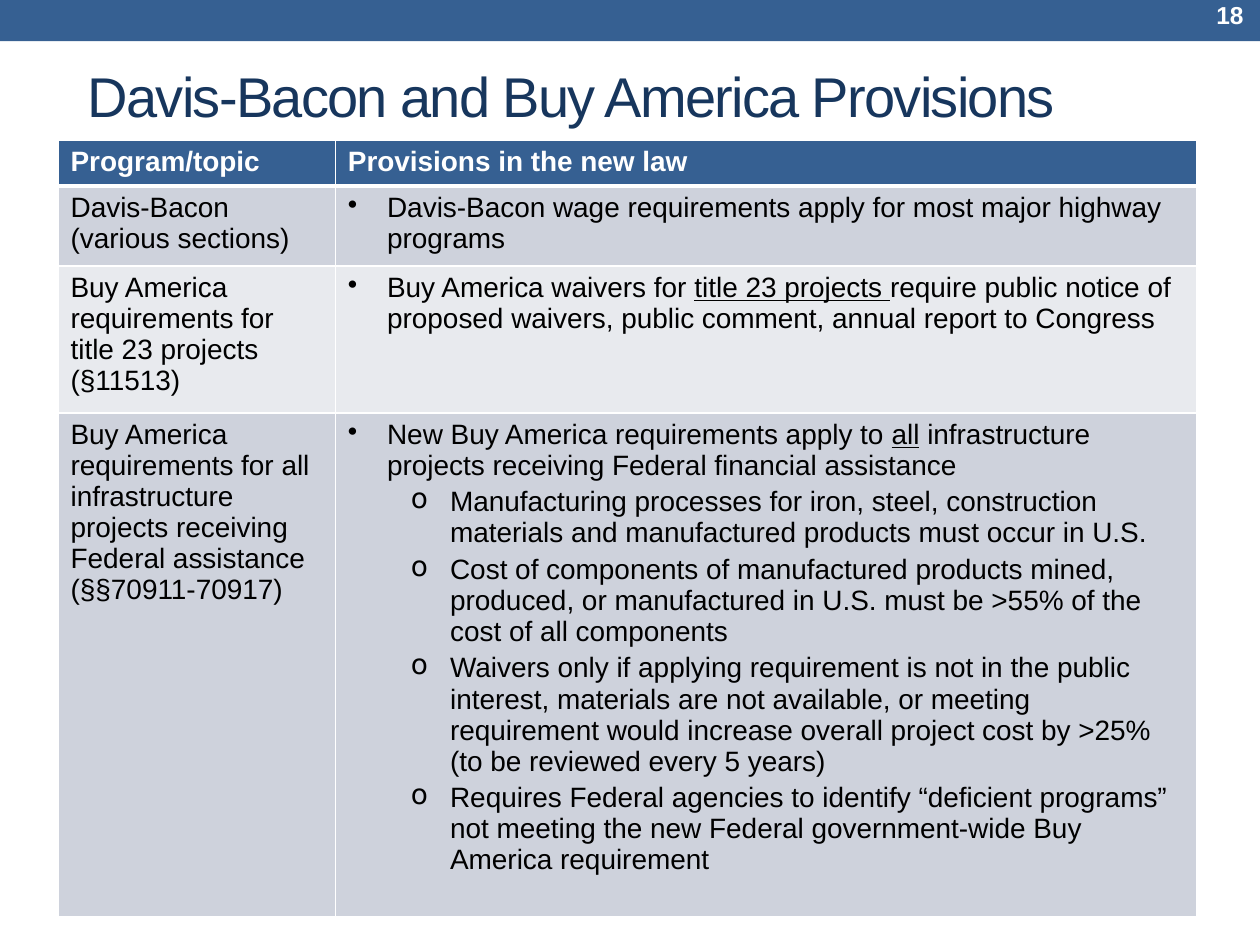
import dataclasses

import pptx
import pptx.dml.color
import pptx.enum.shapes
import pptx.enum.text
import pptx.oxml
import pptx.oxml.ns
import pptx.util
from pptx.util import Cm

PP_ALIGN = pptx.enum.text.PP_ALIGN


@dataclasses.dataclass(frozen=True)
class Theme:
    font: str = "Arial"
    band: str = "366092"
    title: str = "17365D"
    white: str = "FFFFFF"
    body: str = "000000"
    stripes: tuple = ("CED2DC", "E8EAEE")
    title_size: int = 32
    table_size: int = 16
    number_size: int = 14


@dataclasses.dataclass(frozen=True)
class Bullet:
    """A bulleted paragraph; text between underscores is underlined."""
    text: str
    level: int = 0


HEADER = ("Program/topic", "Provisions in the new law")
PROVISIONS = [
    (["Davis-Bacon", "(various sections)"],
     [Bullet("Davis-Bacon wage requirements apply for most major highway programs")]),
    (["Buy America requirements for title 23 projects", "(§11513)"],
     [Bullet("Buy America waivers for _title 23 projects _require public notice of "
             "proposed waivers, public comment, annual report to Congress")]),
    (["Buy America requirements for all infrastructure projects receiving "
      "Federal assistance", "(§§70911-70917)"],
     [Bullet("New Buy America requirements apply to _all_ infrastructure projects "
             "receiving Federal financial assistance"),
      Bullet("Manufacturing processes for iron, steel, construction materials and "
             "manufactured products must occur in U.S.", 1),
      Bullet("Cost of components of manufactured products mined, produced, or "
             "manufactured in U.S. must be >55% of the cost of all components", 1),
      Bullet("Waivers only if applying requirement is not in the public interest, "
             "materials are not available, or meeting requirement would increase "
             "overall project cost by >25% (to be reviewed every 5 years)", 1),
      Bullet("Requires Federal agencies to identify “deficient programs” not meeting "
             "the new Federal government-wide Buy America requirement", 1)]),
]
COLUMN_WIDTHS = (5.59, 17.37)
ROW_HEIGHTS = (0.85, 1.5, 2.76, 9.42)


class SlideBuilder:
    def __init__(self, slide, theme):
        self.slide = slide
        self.theme = theme

    def color(self, value):
        return pptx.dml.color.RGBColor.from_string(value)

    def style(self, paragraph, size, color, bold=False):
        font = paragraph.font
        font.name = self.theme.font
        font.size = pptx.util.Pt(size)
        font.color.rgb = self.color(color)
        font.bold = bold

    def bar(self, left, top, width, height):
        bar = self.slide.shapes.add_shape(
            pptx.enum.shapes.MSO_SHAPE.RECTANGLE, Cm(left), Cm(top), Cm(width), Cm(height))
        bar.shadow.inherit = False
        bar.fill.solid()
        bar.fill.fore_color.rgb = self.color(self.theme.band)
        bar.line.fill.background()

    def text(self, text, box, size, color, bold=False, align=PP_ALIGN.LEFT, spacing=0):
        """Add one line of text; spacing is between letters, in points."""
        frame = self.slide.shapes.add_textbox(*map(Cm, box)).text_frame
        frame.word_wrap = True
        frame.vertical_anchor = pptx.enum.text.MSO_ANCHOR.MIDDLE
        paragraph = frame.paragraphs[0]
        paragraph.alignment = align
        run = paragraph.add_run()
        run.text = text
        self.style(paragraph, size, color, bold)
        if spacing:
            run.font._element.set("spc", str(spacing * 100))

    def bullet(self, paragraph, item):
        for index, part in enumerate(item.text.split("_")):
            run = paragraph.add_run()
            run.text = part
            if index % 2:
                run.font.underline = True
        paragraph.level = item.level
        paragraph.space_after = pptx.util.Pt(3)
        properties = paragraph._p.get_or_add_pPr()
        properties.set("marL", str(Cm(0.79 + 1.27 * item.level)))
        properties.set("indent", str(Cm(-0.79)))
        mark = pptx.oxml.parse_xml(
            f'<a:buChar {pptx.oxml.ns.nsdecls("a")} char="{"•o"[item.level]}"/>')
        properties.insert_element_before(mark, "a:tabLst", "a:defRPr", "a:extLst")

    def borders(self, cell, row):
        """Draw white cell borders, heavier below the header row."""
        properties = cell._tc.get_or_add_tcPr()
        widths = {"L": 1, "R": 1, "T": 3 if row == 1 else 1, "B": 3 if row == 0 else 1}
        for position, (side, width) in enumerate(widths.items()):
            properties.insert(position, pptx.oxml.parse_xml(
                f'<a:ln{side} {pptx.oxml.ns.nsdecls("a")} w="{pptx.util.Pt(width)}">'
                f'<a:solidFill><a:srgbClr val="{self.theme.white}"/></a:solidFill>'
                f'</a:ln{side}>'))

    def cell(self, cell, row, items):
        theme = self.theme
        header = row == 0
        cell.fill.solid()
        cell.fill.fore_color.rgb = self.color(
            theme.band if header else theme.stripes[(row - 1) % 2])
        self.borders(cell, row)
        frame = cell.text_frame
        for index, item in enumerate(items):
            paragraph = frame.add_paragraph() if index else frame.paragraphs[0]
            if isinstance(item, Bullet):
                self.bullet(paragraph, item)
            else:
                paragraph.add_run().text = item
            self.style(paragraph, theme.table_size,
                       theme.white if header else theme.body, header)

    def table(self, left, top, rows):
        table = self.slide.shapes.add_table(
            len(rows), len(COLUMN_WIDTHS), Cm(left), Cm(top),
            Cm(sum(COLUMN_WIDTHS)), Cm(sum(ROW_HEIGHTS))).table
        for column, width in zip(table.columns, COLUMN_WIDTHS):
            column.width = Cm(width)
        for row, (height, contents) in enumerate(zip(ROW_HEIGHTS, rows)):
            table.rows[row].height = Cm(height)
            for column, items in enumerate(contents):
                self.cell(table.cell(row, column), row, items)


def main():
    presentation = pptx.Presentation()
    presentation.slide_width = Cm(25.4)
    presentation.slide_height = Cm(19.05)
    theme = Theme()
    builder = SlideBuilder(
        presentation.slides.add_slide(presentation.slide_layouts[6]), theme)
    builder.bar(0, -0.18, 25.4, 1.01)
    builder.text("Davis-Bacon and Buy America Provisions", (1.52, 0.69, 23.57, 2.46),
                 theme.title_size, theme.title, spacing=-1)
    builder.table(1.17, 2.82, [[[heading] for heading in HEADER], *PROVISIONS])
    builder.text("18", (22.35, -0.15, 2.97, 0.91), theme.number_size, theme.white,
                 bold=True, align=PP_ALIGN.RIGHT)
    presentation.save("out.pptx")


if __name__ == "__main__":
    main()
